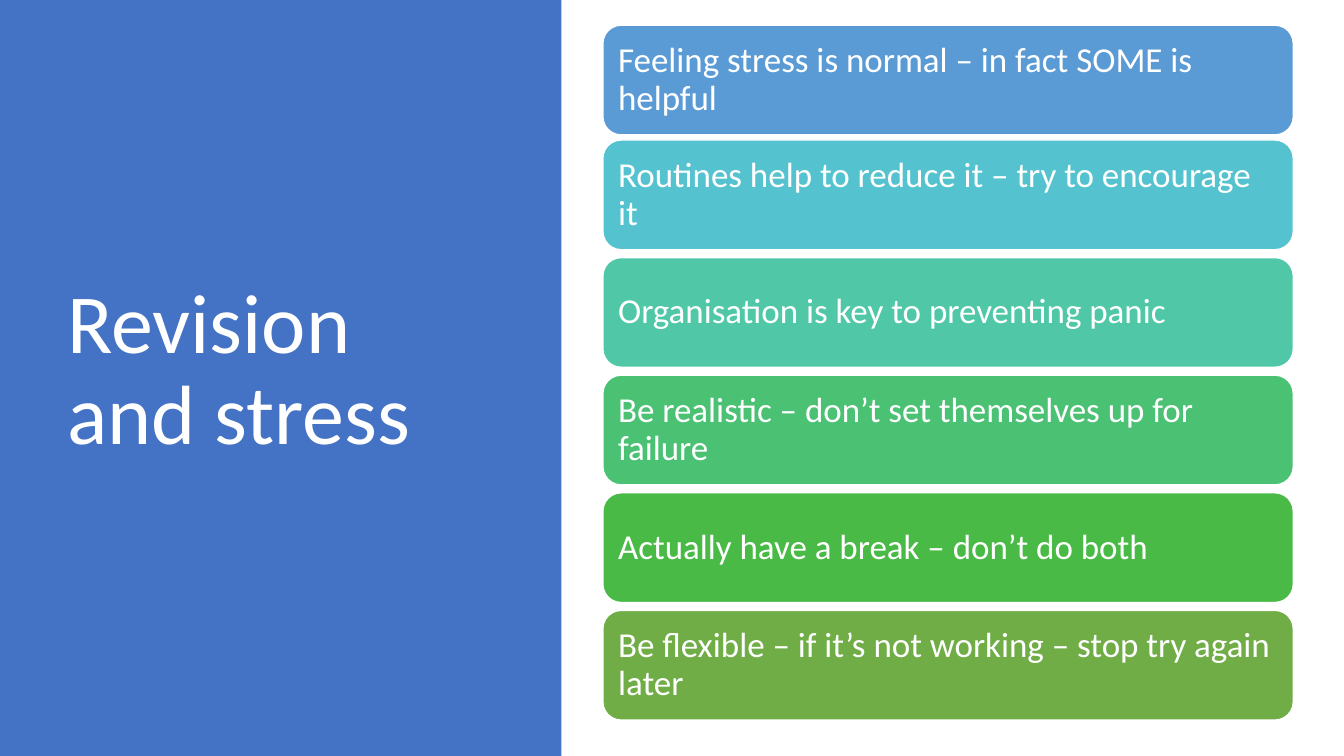
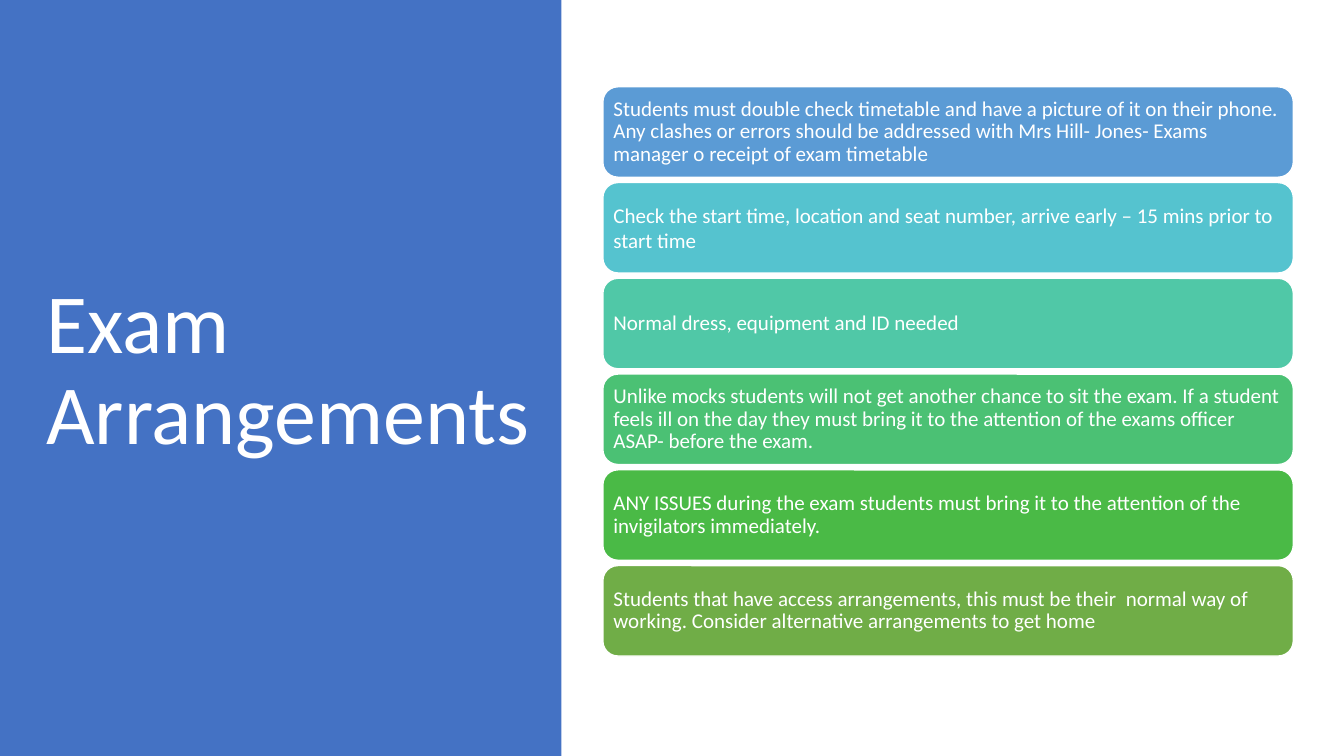
import dataclasses

import pptx
import pptx.dml.color
import pptx.enum.shapes
import pptx.enum.text
import pptx.util


@dataclasses.dataclass(frozen=True)
class Theme:
    font: str = "Calibri"
    panel: str = "4472C4"
    white: str = "FFFFFF"
    bars: tuple[str, ...] = ("5B9BD5", "55C3CF", "50C8A7", "4BC174", "4ABA46", "70AD47")
    title_size: int = 60
    outline: int = 1
    leading: float = 0.9


@dataclasses.dataclass(frozen=True)
class Box:
    """A rectangle in grid columns and rows."""
    x: float
    y: float
    w: float
    h: float


@dataclasses.dataclass(frozen=True)
class Bar:
    text: str
    leading: float = 0.9


@dataclasses.dataclass(frozen=True)
class Page:
    title: str
    title_x: float
    title_w: float
    top: float
    pitch: float
    bar_h: float
    size: int
    inset: float
    bars: tuple[Bar, ...]
    first_drop: float = 0


THEME = Theme()

# Grid: 48 columns by 27 rows of square cells on a 16:9 slide
COLS, ROWS = 48, 27
CELL = pptx.util.Inches(7.5) / ROWS
PANEL = Box(0, 0, 20.05, ROWS)
BAR_X, BAR_W = 21.53, 24.66
TITLE_Y, TITLE_H = 2.45, 21.67

PAGES = (
    Page(
        "Revision and stress", title_x=2.05, title_w=15,
        top=0.8, pitch=4.2, bar_h=3.92, size=25, inset=0.36, first_drop=0.1,
        bars=(
            Bar("Feeling stress is normal – in fact SOME is helpful"),
            Bar("Routines help to reduce it – try to encourage it"),
            Bar("Organisation is key to preventing panic"),
            Bar("Be realistic – don’t set themselves up for failure"),
            Bar("Actually have a break – don’t do both"),
            Bar("Be flexible – if it’s not working – stop try again later"),
        ),
    ),
    Page(
        "Exam Arrangements", title_x=1.3, title_w=18.3,
        top=3.1, pitch=3.42, bar_h=3.23, size=15, inset=0.22,
        bars=(
            Bar("Students must double check timetable and have a picture of it on their phone. "
                "Any clashes or errors should be addressed with Mrs Hill- Jones- Exams manager "
                "o receipt of exam timetable"),
            Bar("Check the start time, location and seat number, arrive early – 15 mins prior "
                "to start time", leading=1.0),
            Bar("Normal dress, equipment and ID needed"),
            Bar("Unlike mocks students will not get another chance to sit the exam. If a student "
                "feels ill on the day they must bring it to the attention of the exams officer "
                "ASAP- before the exam."),
            Bar("ANY ISSUES during the exam students must bring it to the attention of the "
                "invigilators immediately."),
            Bar("Students that have access arrangements, this must be their  normal way of "
                "working. Consider alternative arrangements to get home"),
        ),
    ),
)


def cells(n: float) -> pptx.util.Emu:
    return pptx.util.Emu(round(n * CELL))


def place(box: Box) -> tuple[pptx.util.Emu, ...]:
    return tuple(cells(n) for n in dataclasses.astuple(box))


def rgb(color: str) -> pptx.dml.color.RGBColor:
    return pptx.dml.color.RGBColor.from_string(color)


def write(sp, text: str, *, size: int, leading: float = THEME.leading,
          inset: float | None = None) -> None:
    """Set white, left-aligned, vertically centred text."""
    tf = sp.text_frame
    tf.word_wrap = True
    tf.vertical_anchor = pptx.enum.text.MSO_ANCHOR.MIDDLE
    if inset is not None:
        tf.margin_left = tf.margin_right = tf.margin_top = tf.margin_bottom = cells(inset)
    p = tf.paragraphs[0]
    p.alignment = pptx.enum.text.PP_ALIGN.LEFT
    p.line_spacing = leading
    r = p.add_run()
    r.text = text
    r.font.name = THEME.font
    r.font.size = pptx.util.Pt(size)
    r.font.color.rgb = rgb(THEME.white)


def add_block(s, kind: pptx.enum.shapes.MSO_SHAPE, box: Box, fill: str, *,
              line: str | None = None):
    sp = s.shapes.add_shape(kind, *place(box))
    sp.shadow.inherit = False
    sp.fill.solid()
    sp.fill.fore_color.rgb = rgb(fill)
    if line is None:
        sp.line.fill.background()
    else:
        sp.line.color.rgb = rgb(line)
        sp.line.width = pptx.util.Pt(THEME.outline)
    return sp


def add_page(prs, page: Page) -> None:
    s = prs.slides.add_slide(prs.slide_layouts[6])
    shapes = pptx.enum.shapes.MSO_SHAPE

    # Title panel
    add_block(s, shapes.RECTANGLE, PANEL, THEME.panel)
    title = s.shapes.add_textbox(*place(Box(page.title_x, TITLE_Y, page.title_w, TITLE_H)))
    write(title, page.title, size=THEME.title_size)

    # Stack of bars
    for i, (bar, color) in enumerate(zip(page.bars, THEME.bars)):
        y = page.top + i * page.pitch + (page.first_drop if i == 0 else 0)
        sp = add_block(s, shapes.ROUNDED_RECTANGLE, Box(BAR_X, y, BAR_W, page.bar_h),
                       color, line=THEME.white)
        write(sp, bar.text, size=page.size, leading=bar.leading, inset=page.inset)


def main() -> None:
    prs = pptx.Presentation()
    prs.slide_width, prs.slide_height = cells(COLS), cells(ROWS)
    for page in PAGES:
        add_page(prs, page)
    prs.save("out.pptx")


if __name__ == "__main__":
    main()
